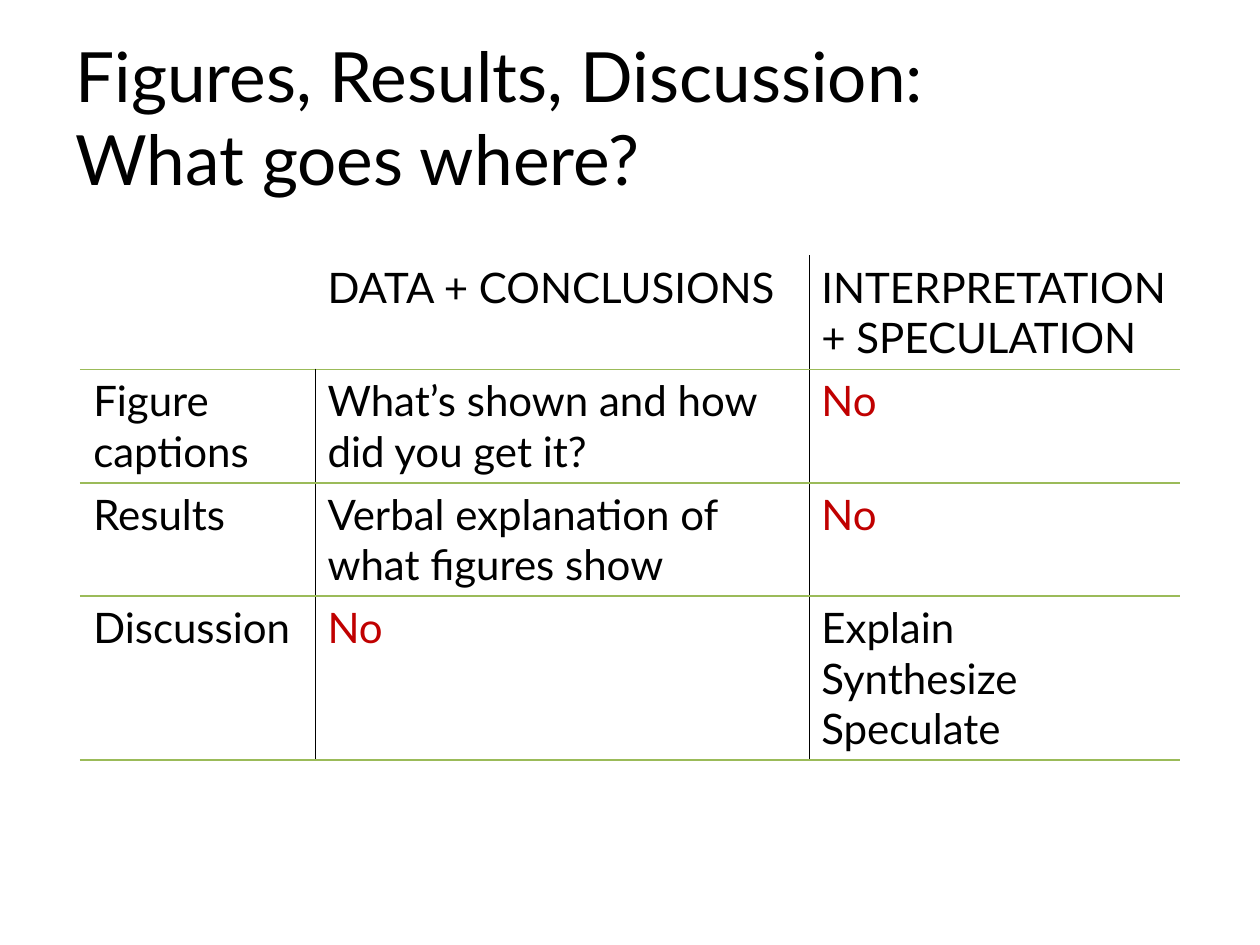
from dataclasses import dataclass

from lxml.etree import SubElement
from pptx import Presentation
from pptx.dml.color import RGBColor as RGB
from pptx.enum.text import MSO_ANCHOR as Anchor, PP_ALIGN as Align
from pptx.oxml.ns import qn
from pptx.util import Pt


@dataclass(frozen=True)
class Theme:
    font: str = "Lato"
    title: float = 39.6
    body: float = 24
    ink: str = "000000"
    no: str = "C00000"
    paper: str = "FFFFFF"
    rule: str = "9BBB59"


@dataclass(frozen=True)
class Border:
    color: str
    width: float


@dataclass(frozen=True)
class Row:
    height: float
    texts: tuple[str, str, str]


THEME = Theme()
BLANK = Border(THEME.paper, 1)
RULE = Border(THEME.rule, 1)
DIVIDER = Border(THEME.ink, 0.25)

LEFT, TOP = 46.1, 146.2
COLS = (133.9, 282.2, 211.7)
ROWS = (
    Row(64.8, ("", "DATA + CONCLUSIONS", "INTERPRETATION + SPECULATION")),
    Row(64.8, ("Figure captions", "What’s shown and how did you get it?", "No")),
    Row(64.8, ("Results", "Verbal explanation of what figures show", "No")),
    Row(93.6, ("Discussion", "No", "Explain\nSynthesize\nSpeculate")),
)


def write(tf, text: str, *, size: float, color: str = THEME.ink,
          anchor=Anchor.TOP) -> None:
    tf.word_wrap = True
    tf.vertical_anchor = anchor
    tf.text = text
    for p in tf.paragraphs:
        p.alignment = Align.LEFT
        for r in p.runs:
            r.font.name = THEME.font
            r.font.size = Pt(size)
            r.font.color.rgb = RGB.from_string(color)


def set_borders(cell, **borders: Border) -> None:
    tc_pr = cell._tc.get_or_add_tcPr()
    for side, border in borders.items():
        ln = SubElement(tc_pr, qn(f"a:ln{side}"), w=str(Pt(border.width)))
        fill = SubElement(ln, qn("a:solidFill"))
        SubElement(fill, qn("a:srgbClr"), val=border.color)


def add_title(s) -> None:
    sp = s.shapes.title
    sp.left, sp.top, sp.width, sp.height = Pt(36), Pt(21.6), Pt(648), Pt(90)
    write(sp.text_frame, "Figures, Results, Discussion:\vWhat goes where?",
          size=THEME.title, anchor=Anchor.MIDDLE)


def add_grid(s, rows: tuple[Row, ...], cols: tuple[float, ...]) -> None:
    height = sum(row.height for row in rows)
    table = s.shapes.add_table(len(rows), len(cols), Pt(LEFT), Pt(TOP),
                               Pt(sum(cols)), Pt(height)).table
    table.first_row = table.horz_banding = False
    for column, width in zip(table.columns, cols):
        column.width = Pt(width)
    for i, row in enumerate(rows):
        table.rows[i].height = Pt(row.height)
        edges = (BLANK, BLANK if i == 0 else DIVIDER, DIVIDER, BLANK)
        for j, text in enumerate(row.texts):
            cell = table.cell(i, j)
            set_borders(cell, L=edges[j], R=edges[j + 1],
                        T=BLANK if i == 0 else RULE, B=RULE)
            cell.fill.solid()
            cell.fill.fore_color.rgb = RGB.from_string(THEME.paper)
            if text:
                write(cell.text_frame, text, size=THEME.body,
                      color=THEME.no if text == "No" else THEME.ink)


def main() -> None:
    prs = Presentation()
    prs.slide_width, prs.slide_height = Pt(720), Pt(540)
    s = prs.slides.add_slide(prs.slide_layouts[5])
    add_title(s)
    add_grid(s, ROWS, COLS)
    prs.save("out.pptx")


if __name__ == "__main__":
    main()
